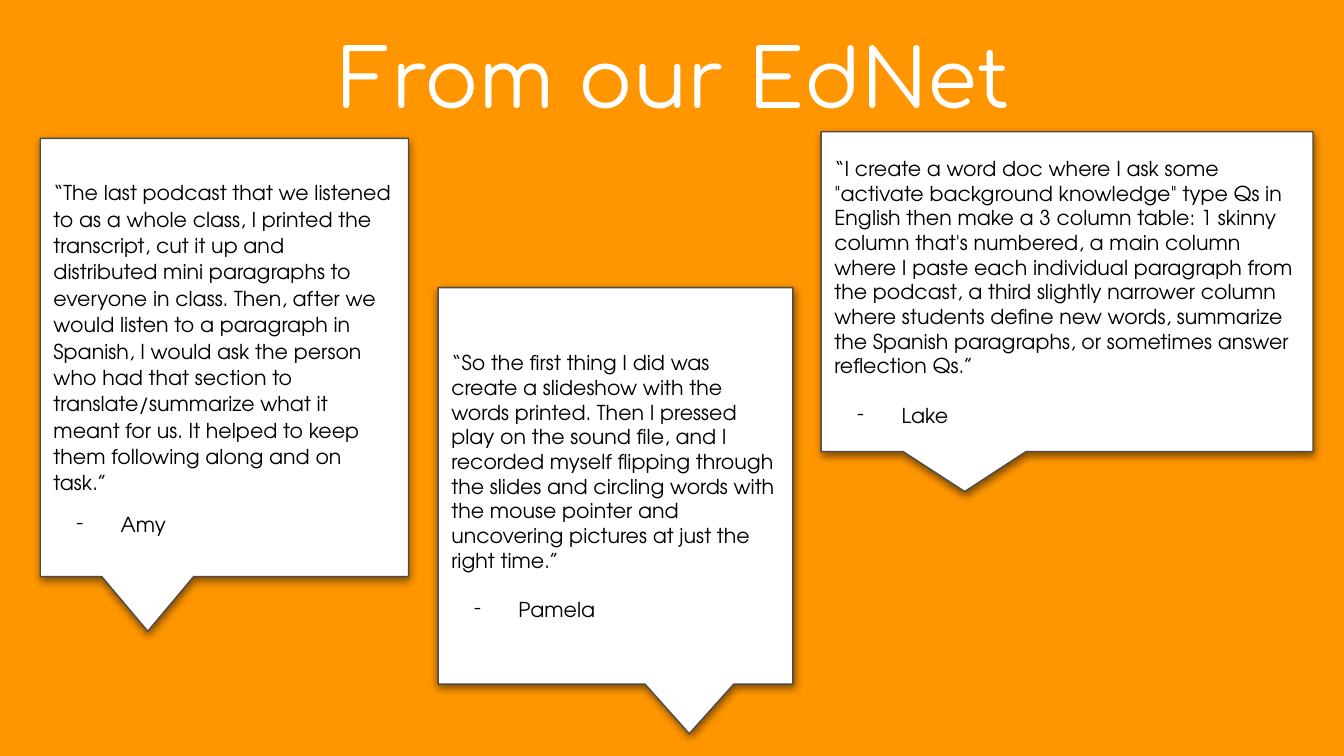
import pptx
import pptx.util
import pptx.dml.color
import pptx.enum.shapes
import pptx.enum.text
from lxml import etree
from pptx.util import Inches, Pt

TITLE = "From our EdNet"
BODY_FONT = "TeX Gyre Adventor"
# box: left, top, width, height; tail: horizontal offset of the callout tip;
# right: right inset; spacing: line spacing; gap: points between quote and name
QUOTES = [
    dict(name="Lake", box=(6.11, 0.98, 3.66, 2.38), tail=-0.208, right=0.1, spacing=None, gap=13.2,
         text="“I create a word doc where I ask some \"activate background knowledge\" type Qs "
              "in English then make a 3 column table: 1 skinny column that's numbered, a main "
              "column where I paste each individual paragraph from the podcast, a third slightly "
              "narrower column where students define new words, summarize the Spanish "
              "paragraphs, or sometimes answer reflection Qs.”"),
    dict(name="Amy", box=(0.3, 1.03, 2.74, 3.26), tail=-0.208, right=0.12, spacing=1.07, gap=8,
         text="“The last podcast that we listened to as a whole class, I printed the transcript, "
              "cut it up and distributed mini paragraphs to everyone in class. Then, after we "
              "would listen to a paragraph in Spanish, I would ask the person who had that "
              "section to translate/summarize what it meant for us. It helped to keep them "
              "following along and on task.”"),
    dict(name="Pamela", box=(3.26, 2.14, 2.64, 2.95), tail=0.208, right=0.1, spacing=None, gap=13.2,
         text="“So the first thing I did was create a slideshow with the words printed. Then I "
              "pressed play on the sound file, and I recorded myself flipping through the slides "
              "and circling words with the mouse pointer and uncovering pictures at just the "
              "right time.”"),
]


def rgb(color):
    return pptx.dml.color.RGBColor.from_string(color)


def add_xml(parent, tag, **attrs):
    child = etree.SubElement(parent, pptx.oxml.ns.qn(tag))
    for key, value in attrs.items():
        child.set(key, str(value))
    return child


def set_font(p, name, size, color):
    p.font.name = name
    p.font.size = Pt(size)
    p.font.color.rgb = rgb(color)


def set_frame(tf, right):
    tf.word_wrap = True
    tf.auto_size = pptx.enum.text.MSO_AUTO_SIZE.NONE
    tf.vertical_anchor = pptx.enum.text.MSO_ANCHOR.MIDDLE
    tf.margin_left = tf.margin_top = tf.margin_bottom = Inches(0.1)
    tf.margin_right = Inches(right)


def add_shadow(sp):
    sp.shadow.inherit = False
    effects = sp._element.spPr.find(pptx.oxml.ns.qn("a:effectLst"))
    shadow = add_xml(effects, "a:outerShdw", blurRad=Pt(4.5), dist=Pt(1.5),
                     dir=90 * 60000, algn="bl", rotWithShape=0)
    add_xml(add_xml(shadow, "a:srgbClr", val="000000"), "a:alpha", val=50000)


def add_dash(p):
    """Give the paragraph a hanging dash bullet."""
    pPr = p._p.get_or_add_pPr()
    pPr.set("marL", str(Inches(0.5)))
    pPr.set("indent", str(Inches(-0.33)))
    add_xml(add_xml(pPr, "a:buClr"), "a:srgbClr", val="000000")
    add_xml(pPr, "a:buFont", typeface=BODY_FONT)
    add_xml(pPr, "a:buChar", char="-")


def add_quote(s, name, box, tail, right, spacing, gap, text):
    sp = s.shapes.add_shape(pptx.enum.shapes.MSO_SHAPE.ROUNDED_RECTANGULAR_CALLOUT,
                            *map(Inches, box))
    for i, value in enumerate((tail, 0.625, 0)):
        sp.adjustments[i] = value
    sp.fill.solid()
    sp.fill.fore_color.rgb = rgb("FFFFFF")
    sp.line.color.rgb = rgb("4B4B4B")
    sp.line.width = Pt(0.75)
    add_shadow(sp)

    tf = sp.text_frame
    set_frame(tf, right)
    quote, author = tf.paragraphs[0], tf.add_paragraph()
    quote.text, author.text = text, name
    add_dash(author)
    author.space_before = Pt(gap)
    for p in (quote, author):
        p.alignment = pptx.enum.text.PP_ALIGN.LEFT
        p.line_spacing = spacing
        set_font(p, BODY_FONT, 11, "000000")


prs = pptx.Presentation()
prs.slide_width = Inches(10)
prs.slide_height = Inches(10 * 9 / 16)
s = prs.slides.add_slide(prs.slide_layouts[5])
s.background.fill.solid()
s.background.fill.fore_color.rgb = rgb("FF9600")

title = s.shapes.title
title.left, title.top, title.width, title.height = map(Inches, (1.14, 0.11, 7.94, 0.92))
set_frame(title.text_frame, right=0.27)
p = title.text_frame.paragraphs[0]
p.text = TITLE
p.alignment = pptx.enum.text.PP_ALIGN.CENTER
set_font(p, "Comfortaa", 43.2, "FFFFFF")

for quote in QUOTES:
    add_quote(s, **quote)

prs.save("out.pptx")
